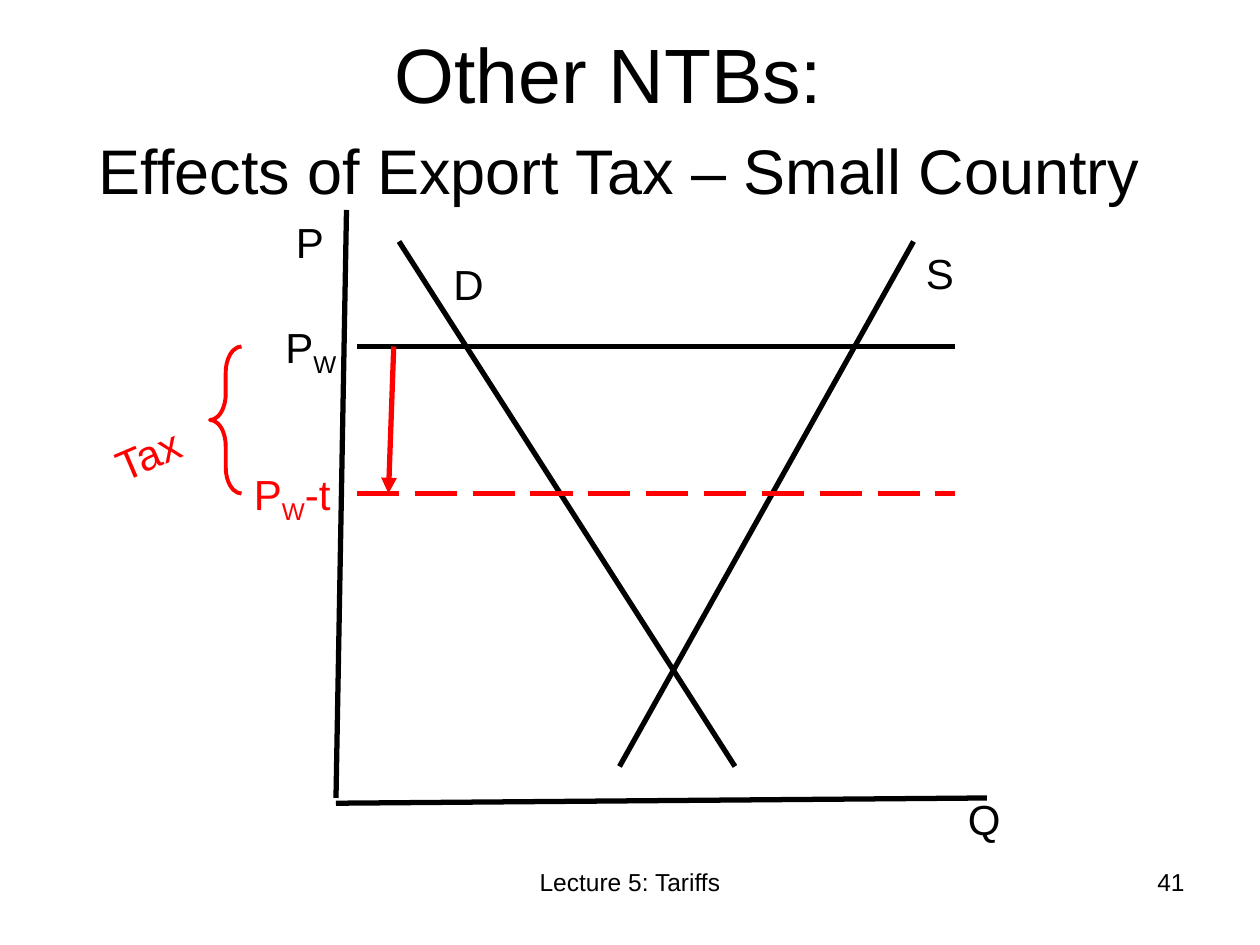
from lxml import etree
from pptx import Presentation
from pptx import util as u
from pptx.dml.color import RGBColor
from pptx.enum import dml, shapes, text
from pptx.oxml.ns import qn

Pt = u.Pt
BLACK, RED = "000000", "FF0000"
ALIGN = text.PP_ALIGN


def color(value):
    """Turn a hex string into a colour."""
    return RGBColor.from_string(value)


def set_all(target, values):
    """Set each named attribute of the target."""
    for name, value in values.items():
        setattr(target, name, value)


def add_span(para, words, size, ink, baseline=0):
    """Add a run of text, lowered when the baseline is negative."""
    span = para.add_run()
    span.text = words
    set_all(span.font, {"name": "Arial", "size": Pt(size)})
    span.font.color.rgb = color(ink)
    if baseline:
        span.font._element.set("baseline", str(baseline * 1000))


def add_box(page, box, anchor=text.MSO_ANCHOR.TOP):
    """Add a wrapping text box."""
    shape = page.shapes.add_textbox(*map(Pt, box))
    set_all(shape.text_frame, {"word_wrap": True, "vertical_anchor": anchor})
    return shape


def add_label(page, box, spans, ink=BLACK, size=24, align=ALIGN.LEFT, turn=0):
    """Add one line of text made of (words, baseline) spans."""
    shape = add_box(page, box)
    shape.rotation = turn
    para = shape.text_frame.paragraphs[0]
    para.alignment = align
    for words, baseline in spans:
        add_span(para, words, size, ink, baseline)


def add_line(page, origin, start, end, ink=BLACK, dash=None, arrow=False):
    """Draw a straight line between two points measured from the origin."""
    left, top = origin
    line = page.shapes.add_connector(
        shapes.MSO_CONNECTOR.STRAIGHT,
        Pt(left + start[0]), Pt(top + start[1]),
        Pt(left + end[0]), Pt(top + end[1]))
    set_all(line.line, {"width": Pt(3), "dash_style": dash})
    line.line.color.rgb = color(ink)
    if arrow:
        etree.SubElement(line.line._get_or_add_ln(), qn("a:tailEnd"), type="triangle")
    etree.SubElement(line._element.spPr, qn("a:effectLst"))


def add_title(page, box):
    """Place the two-line heading."""
    frame = add_box(page, box, text.MSO_ANCHOR.MIDDLE).text_frame
    lines = [("Other NTBs:", 44, 0, {"marR": 24}),
             ("Effects of Export Tax – Small Country", 36, 7, {"marL": 12})]
    for index, (words, size, gap, margins) in enumerate(lines):
        para = frame.add_paragraph() if index else frame.paragraphs[0]
        set_all(para, {"alignment": ALIGN.CENTER, "space_before": Pt(gap)})
        for side, width in margins.items():
            para._p.get_or_add_pPr().set(side, str(Pt(width)))
        add_span(para, words, size, BLACK)


def add_market(page, box):
    """Draw axes, supply and demand curves, prices and the export tax."""
    left, top, width, height = box
    origin = left, top
    world, taxed = 78, 162
    price_left, price_right = 12, 354

    add_line(page, origin, (6, 0), (0, height - 3))
    add_line(page, origin, (0, height), (width, height - 3))
    add_line(page, origin, (330, 18), (162, 318))
    add_line(page, origin, (36, 18), (228, 318))
    add_line(page, origin, (price_left, world), (price_right, world))
    add_line(page, origin, (price_left, taxed), (price_right, taxed),
             RED, dml.MSO_LINE.LONG_DASH)

    labels = [
        (330, 18, 42, [("S", 0)], BLACK, 0),
        (60, 24, 42, [("D", 0)], BLACK, 0),
        (-36, 60, 48, [("P", 0), ("W", -25)], BLACK, 0),
        (-30, 0, 48, [("P", 0)], BLACK, 0),
        (-54, 144, 78, [("P", 0), ("W", -25), ("-t", 0)], RED, 0),
        (-134.4, 116.2, 78, [("Tax", 0)], RED, 336.8),
        (354, 330, 42, [("Q", 0)], BLACK, 0),
    ]
    for x, y, span_width, spans, ink, turn in labels:
        add_label(page, (left + x, top + y, span_width, 36), spans, ink, turn=turn)

    brace = page.shapes.add_shape(
        shapes.MSO_SHAPE.LEFT_BRACE,
        Pt(left - 72), Pt(top + world), Pt(18), Pt(taxed - world))
    brace.adjustments[0] = 0.83
    brace.shadow.inherit = False
    brace.fill.background()
    brace.line.width = Pt(2.25)
    brace.line.color.rgb = color(RED)

    add_line(page, origin, (33, world), (30, taxed), RED, arrow=True)


def add_footer(page, box):
    """Place the lecture name and the page number."""
    left, top, width, height = box
    add_label(page, (left, top, 228, height), [("Lecture 5: Tariffs", 0)],
              size=14, align=ALIGN.CENTER)
    add_label(page, (left + width - 168, top, 168, height), [("41", 0)],
              size=14, align=ALIGN.RIGHT)


def main():
    """Build and save the deck."""
    deck = Presentation()
    set_all(deck, {"slide_width": Pt(720), "slide_height": Pt(540)})
    page = deck.slides.add_slide(deck.slide_layouts[6])
    add_footer(page, (246, 492, 438, 37.5))
    add_title(page, (36, 21.6, 648, 90))
    add_market(page, (192, 120, 372, 339))
    deck.save("out.pptx")


if __name__ == "__main__":
    main()
